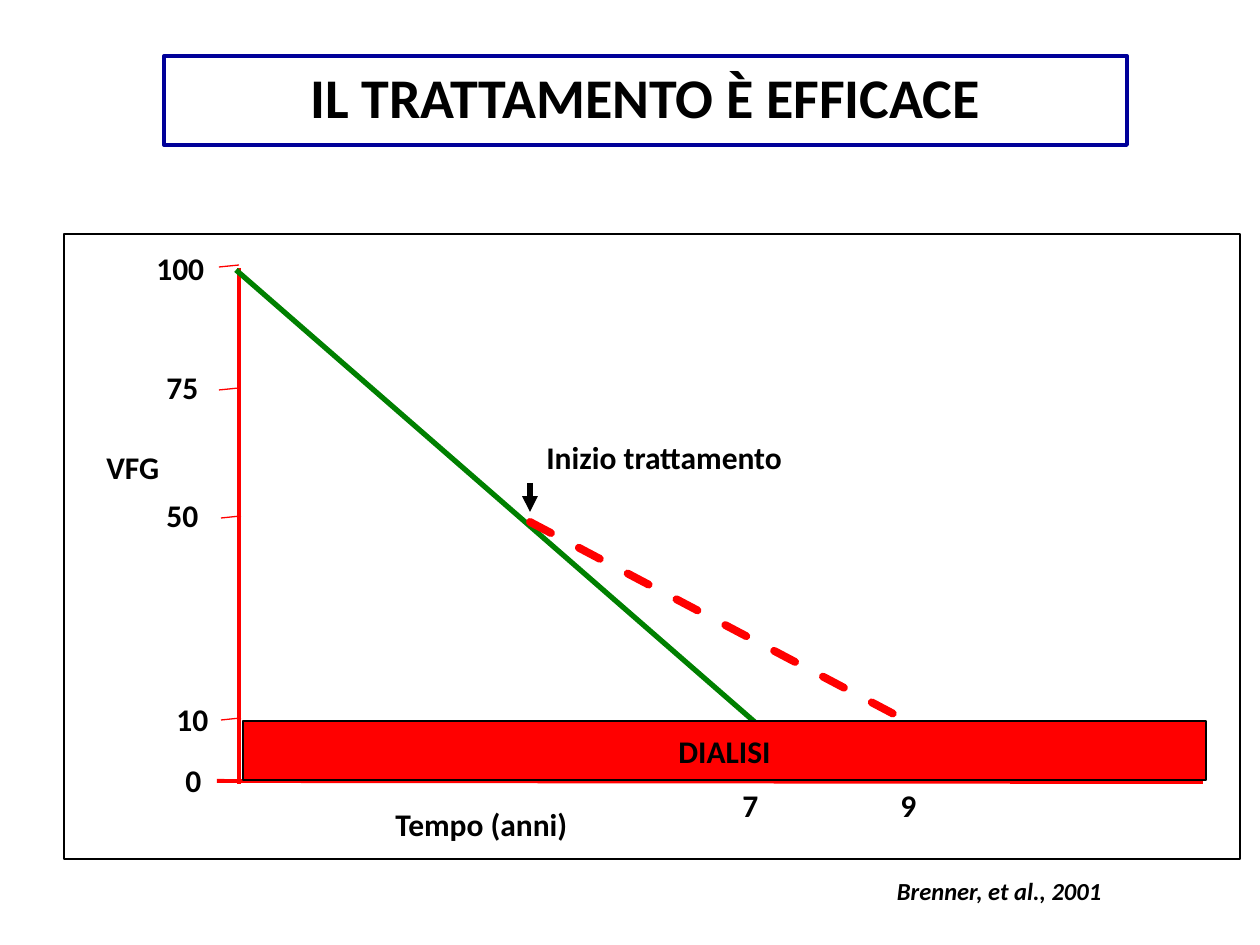
from lxml import etree
from pptx import Presentation, util as u
from pptx.dml.color import RGBColor
from pptx.enum import dml, shapes, text
from pptx.oxml.ns import qn

SCALE = 914400 / 126  # EMU per px
FONT = "Calibri"
BLACK, WHITE, RED, GREEN, NAVY = "000000", "FFFFFF", "FF0000", "008000", "000099"
LABEL_HEIGHT = 50

# Rectangles: left, top, width, height
FRAME = (64, 234, 1176, 625)
TITLE = ("IL TRATTAMENTO È EFFICACE", (164, 56, 963, 89))
DIALYSIS = ("DIALISI", (243, 721, 963, 59))
SOURCE = ("Brenner, et al., 2001", (64, 870, 1050, 40))

# Lines: x1, y1, x2, y2
AXES = [(239, 268, 239, 784), (217, 781, 1203, 782)]
TICKS = [(219, 267), (219, 390), (221, 518), (221, 720)]
TICK_RUN, TICK_RISE = 20, 2
UNTREATED = (236, 270, 757, 724)
TREATED = (530, 522, 907, 721)
START_ARROW = (530, 483, 530, 512)

# Labels: text, left, top, width
LABELS = [
    ("Tempo (anni)", 383, 799, 220),
    ("VFG", 94, 442, 89),
    ("100", 144, 243, 77),
    ("75", 154, 362, 59),
    ("50", 154, 490, 59),
    ("10", 164, 694, 59),
    ("0", 173, 755, 44),
    ("7", 730, 780, 43),
    ("9", 888, 780, 43),
    ("Inizio trattamento", 534, 432, 262),
]


def px(*values):
    return [u.Emu(round(value * SCALE)) for value in values]


def color(value):
    return RGBColor.from_string(value)


def write(shape, words, size, align, anchor=text.MSO_ANCHOR.TOP, wrap=True, italic=False):
    frame = shape.text_frame
    frame.word_wrap = wrap
    frame.vertical_anchor = anchor
    para = frame.paragraphs[0]
    para.alignment = align
    span = para.add_run()
    span.text = words
    font = span.font
    font.name, font.size, font.bold, font.italic = FONT, u.Pt(size), True, italic
    font.color.rgb = color(BLACK)


def add_box(page, bounds, fill, line, width):
    box = page.shapes.add_shape(shapes.MSO_SHAPE.RECTANGLE, *px(*bounds))
    box.shadow.inherit = False
    box.fill.solid()
    box.fill.fore_color.rgb = color(fill)
    box.line.color.rgb = color(line)
    box.line.width = u.Pt(width)
    return box


def add_line(page, ends, line, width):
    connector = page.shapes.add_connector(shapes.MSO_CONNECTOR.STRAIGHT, *px(*ends))
    connector.line.color.rgb = color(line)
    connector.line.width = u.Pt(width)
    etree.SubElement(connector._element.spPr, qn("a:effectLst"))
    return connector


def add_text(page, bounds, words, size, align, **options):
    box = page.shapes.add_textbox(*px(*bounds))
    write(box, words, size, align, **options)


def main():
    deck = Presentation()
    deck.slide_width, deck.slide_height = u.Inches(10), u.Inches(7.5)
    page = deck.slides.add_slide(deck.slide_layouts[6])
    left, center, right = text.PP_ALIGN.LEFT, text.PP_ALIGN.CENTER, text.PP_ALIGN.RIGHT

    # Chart frame and title
    add_box(page, FRAME, WHITE, BLACK, 0.75)
    words, bounds = TITLE
    write(add_box(page, bounds, WHITE, NAVY, 2.25), words, 32, center)

    # Axes and slanted ticks
    for axis in AXES:
        add_line(page, axis, RED, 2.25)
    for x, y in TICKS:
        add_line(page, (x, y, x + TICK_RUN, y - TICK_RISE), RED, 0.75)

    # Decline without and with treatment
    add_line(page, UNTREATED, GREEN, 3)
    treated = add_line(page, TREATED, RED, 4.5)
    treated.line.dash_style = dml.MSO_LINE.DASH
    treated.line._get_or_add_ln().set("cap", "rnd")

    # Dialysis band
    words, bounds = DIALYSIS
    band = add_box(page, bounds, RED, BLACK, 0.75)
    write(band, words, 18, center, anchor=text.MSO_ANCHOR.MIDDLE, wrap=False)

    # Start of treatment
    arrow = add_line(page, START_ARROW, BLACK, 3)
    etree.SubElement(arrow.line._get_or_add_ln(), qn("a:tailEnd"), type="triangle")

    # Labels and source
    for words, x, y, width in LABELS:
        add_text(page, (x, y, width, LABEL_HEIGHT), words, 18, left, wrap=False)
    words, bounds = SOURCE
    add_text(page, bounds, words, 14, right, italic=True)

    deck.save("out.pptx")


if __name__ == "__main__":
    main()
